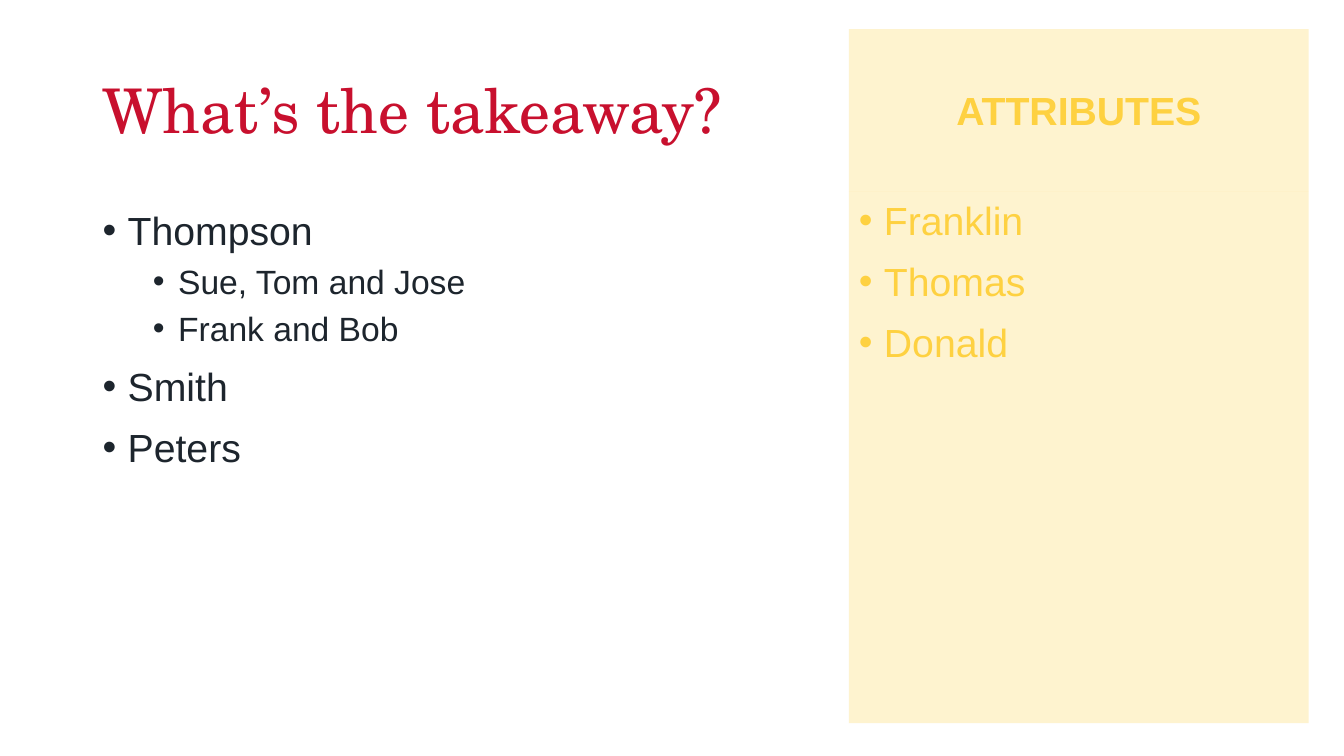
from dataclasses import dataclass

from lxml.etree import SubElement
from pptx import Presentation
from pptx.dml.color import RGBColor
from pptx.enum.shapes import MSO_SHAPE as Preset
from pptx.enum.text import MSO_ANCHOR as Anchor, MSO_AUTO_SIZE as AutoSize, PP_ALIGN as Align
from pptx.oxml.ns import qn
from pptx.util import Inches, Pt


@dataclass(frozen=True)
class Theme:
    heading_font: str = "TeX Gyre Schola"
    text_font: str = "Arial"
    red: str = "C8102E"
    ink: str = "1D252D"
    gold: str = "FED141"
    tint: int = 25
    heading_size: int = 44
    level_sizes: tuple = (28, 24)
    level_gaps: tuple = (10, 5)


class TakeawaySlide:
    """Places themed elements on one slide, with lengths in percent of its size."""

    def __init__(self, deck, theme):
        self.deck, self.theme = deck, theme
        self.slide = deck.slides.add_slide(deck.slide_layouts[1])

    def place(self, element, left, top, width, height):
        element.left = int(self.deck.slide_width * left / 100)
        element.top = int(self.deck.slide_height * top / 100)
        element.width = int(self.deck.slide_width * width / 100)
        element.height = int(self.deck.slide_height * height / 100)

    def frame(self, element, anchor):
        frame = element.text_frame
        frame.word_wrap = True
        frame.auto_size = AutoSize.NONE
        frame.vertical_anchor = anchor
        return frame

    def add_words(self, paragraph, words, size, color, font, bold=False):
        run = paragraph.add_run()
        run.text = words
        run.font.name, run.font.size, run.font.bold = font, Pt(size), bold
        run.font.color.rgb = RGBColor.from_string(color)

    def bullets(self, frame, entries, color):
        for index, (level, words) in enumerate(entries):
            entry = frame.add_paragraph() if index else frame.paragraphs[0]
            entry.level = level
            entry.alignment = Align.LEFT
            entry.line_spacing = 1.0
            entry.space_before = Pt(self.theme.level_gaps[level])
            properties = entry._p.get_or_add_pPr()
            properties.set("marL", str(Inches(0.25 + 0.5 * level)))
            properties.set("indent", str(Inches(-0.25)))
            SubElement(properties, qn("a:buFont"), typeface=self.theme.text_font)
            SubElement(properties, qn("a:buChar"), char="•")
            self.add_words(entry, words, self.theme.level_sizes[level], color,
                           self.theme.text_font)

    def title(self, words, *area):
        heading = self.slide.shapes.title
        self.place(heading, *area)
        line = self.frame(heading, Anchor.MIDDLE).paragraphs[0]
        line.alignment = Align.LEFT
        line.line_spacing = 0.9
        self.add_words(line, words, self.theme.heading_size, self.theme.red,
                       self.theme.heading_font)

    def body(self, entries, *area):
        names = self.slide.placeholders[1]
        self.place(names, *area)
        self.bullets(self.frame(names, Anchor.TOP), entries, self.theme.ink)

    def panel(self, anchor, *area):
        panel = self.slide.shapes.add_shape(Preset.RECTANGLE, 0, 0, 0, 0)
        self.place(panel, *area)
        panel.shadow.inherit = False
        panel.line.fill.background()
        panel.fill.solid()
        panel.fill.fore_color.rgb = RGBColor.from_string(self.theme.gold)
        tint = panel._element.spPr.find(qn("a:solidFill"))[0]
        SubElement(tint, qn("a:alpha"), val=str(self.theme.tint * 1000))
        return self.frame(panel, anchor)

    def list_panel(self, entries, *area):
        self.bullets(self.panel(Anchor.TOP, *area), entries, self.theme.gold)

    def label_panel(self, words, *area):
        label = self.panel(Anchor.MIDDLE, *area).paragraphs[0]
        label.alignment = Align.CENTER
        label.space_before = Pt(self.theme.level_gaps[0])
        self.add_words(label, words, self.theme.level_sizes[0], self.theme.gold,
                       self.theme.text_font, bold=True)


def main():
    deck = Presentation()
    deck.slide_width, deck.slide_height = Inches(13.33), Inches(7.5)
    takeaway = TakeawaySlide(deck, Theme())
    main_left, main_width = 6.88, 49.66
    side_left, side_width = 63.16, 34.22
    label_top, label_height, list_height = 3.87, 21.4, 70.4
    takeaway.title("What’s the takeaway?", main_left, 5.33, main_width, 19.33)
    takeaway.body(
        [(0, "Thompson"), (1, "Sue, Tom and Jose"), (1, "Frank and Bob"),
         (0, "Smith"), (0, "Peters")],
        main_left, 26.67, main_width, 63.45)
    takeaway.list_panel(
        [(0, "Franklin"), (0, "Thomas"), (0, "Donald")],
        side_left, label_top + label_height, side_width, list_height)
    takeaway.label_panel("ATTRIBUTES", side_left, label_top, side_width, label_height)
    deck.save("out.pptx")


if __name__ == "__main__":
    main()
